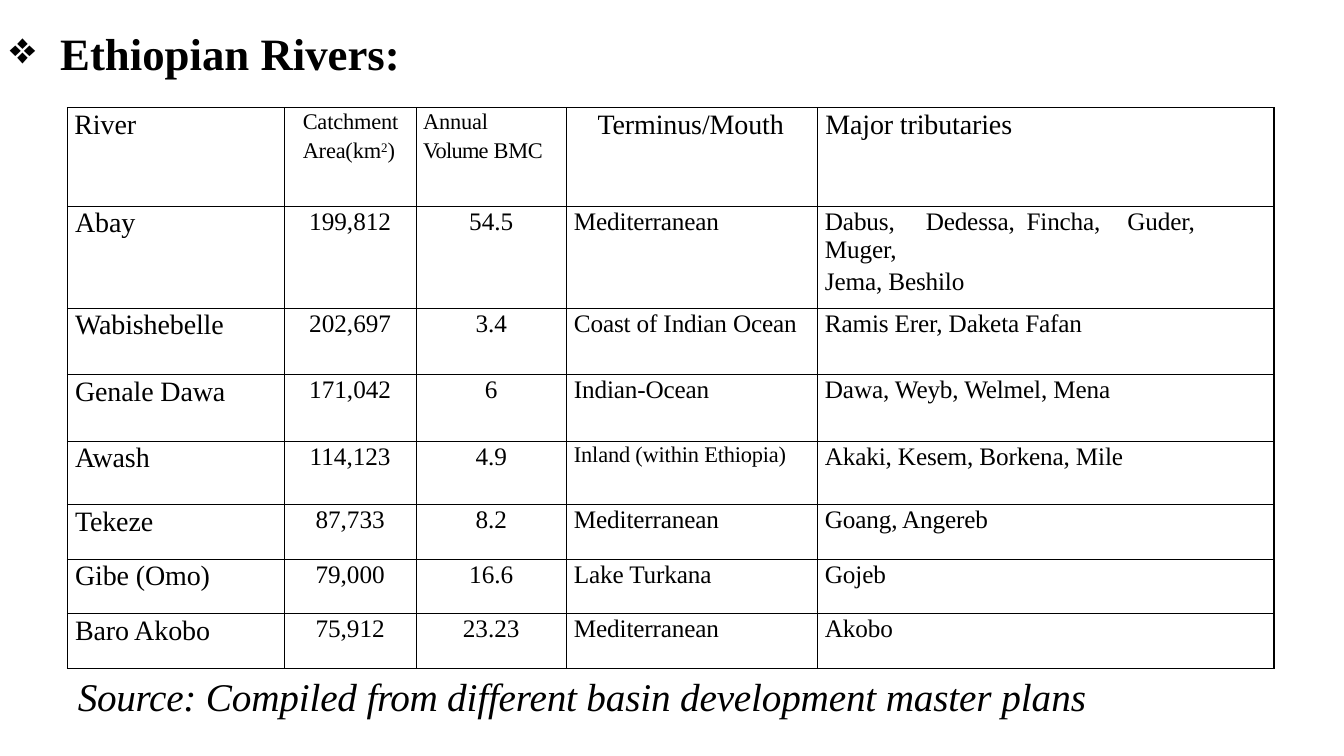
from lxml import etree
from pptx import Presentation
from pptx.dml import color
from pptx.enum import text
from pptx.oxml import ns
from pptx.util import Pt

FACE = "Times New Roman"
INK = "000000"
COLS = [154.8, 94.3, 107.3, 179.3, 326.2]
ROWS = [70.6, 72.7, 47.5, 47.5, 45.4, 38.9, 38.9, 38.9]
STOPS = [67, 142.6, 206.6, 266.4]
HEADS = [
    (20, 5, [[("River", -0.1)]]),
    (16, 13.3, [[("Catchment", -0.1)], [("Area(km", -0.1), ("2", -0.1, 26), (")", -0.1)]]),
    (16, 5, [[("Annual", -0.1)], [("Volume ", -0.5), ("BMC", -0.1)]]),
    (20, 22.3, [[("Terminus/Mouth", -0.1)]]),
    (20, 5.7, [[("Major tributaries", -0.1)]]),
]
RIVERS = [
    ("Abay", "199,812", "54.5", "Mediterranean",
     "Dabus,\tDedessa,\tFincha,\tGuder,\tMuger,\nJema, Beshilo"),
    ("Wabishebelle", "202,697", "3.4", "Coast of Indian Ocean", "Ramis Erer, Daketa Fafan"),
    ("Genale Dawa", "171,042", "6", "Indian-Ocean", "Dawa, Weyb, Welmel, Mena"),
    ("Awash", "114,123", "4.9", "Inland (within Ethiopia)", "Akaki, Kesem, Borkena, Mile"),
    ("Tekeze", "87,733", "8.2", "Mediterranean", "Goang, Angereb"),
    ("Gibe (Omo)", "79,000", "16.6", "Lake Turkana", "Gojeb"),
    ("Baro Akobo", "75,912", "23.23", "Mediterranean", "Akobo"),
]


def paint(code):
    return color.RGBColor.from_string(code)


def add(parent, tag, **attrs):
    node = etree.SubElement(parent, ns.qn(tag))
    for key, value in attrs.items():
        node.set(key, str(value))
    return node


def write(par, bits, size, left=0, hang=0, gap=0.7, mid=False, bold=False, slant=False):
    par.alignment = text.PP_ALIGN.CENTER if mid else text.PP_ALIGN.LEFT
    par.space_before = Pt(gap)
    props = par._p.get_or_add_pPr()
    props.set("marL", str(Pt(left)))
    props.set("indent", str(Pt(hang)))
    for words, track, *rise in bits:
        run = par.add_run()
        run.text = words
        font = run.font
        font.name, font.size = FACE, Pt(size)
        font.bold, font.italic = bold, slant
        font.color.rgb = paint(INK)
        marks = run._r.get_or_add_rPr()
        marks.set("spc", str(round(track * 100)))
        if rise:
            marks.set("baseline", str(rise[0] * 1000))
    return props


def trim(frame):
    frame.margin_left = frame.margin_right = frame.margin_bottom = 0
    frame.margin_top = Pt(0.9)
    frame.vertical_anchor = text.MSO_ANCHOR.TOP
    frame.word_wrap = True
    frame.auto_size = text.MSO_AUTO_SIZE.SHAPE_TO_FIT_TEXT


def head(slide, left, top, width, height):
    title = slide.shapes.title
    title.left, title.top, title.width, title.height = map(Pt, (left, top, width, height))
    trim(title.text_frame)
    props = write(title.text_frame.paragraphs[0], [("Ethiopian Rivers:", 0)],
                  32, 36.5, -36, 1, bold=True)
    add(props, "a:buChar", char="❖")
    add(add(props, "a:tabLst"), "a:tab", pos=Pt(36.5), algn="l")


def frame(cell):
    cell.margin_left = cell.margin_right = cell.margin_bottom = 0
    cell.margin_top = Pt(0.9)
    props = cell._tc.get_or_add_tcPr()
    for side in "LRTB":
        line = add(props, "a:ln" + side, w=Pt(1))
        add(add(line, "a:solidFill"), "a:srgbClr", val=INK)
    cell.fill.background()


def fill(cell, lines, size, left, gap, mid=False):
    frame(cell)
    box = cell.text_frame
    for i, bits in enumerate(lines):
        par = box.add_paragraph() if i else box.paragraphs[0]
        props = write(par, bits, size, left, gap=3 if i else gap, mid=mid)
        if "\t" in bits[0][0]:
            tabs = add(props, "a:tabLst")
            for stop in STOPS:
                add(tabs, "a:tab", pos=Pt(stop), algn="l")


def grid(slide, left, top):
    table = slide.shapes.add_table(len(ROWS), len(COLS), Pt(left), Pt(top),
                                   Pt(sum(COLS)), Pt(sum(ROWS))).table
    table.first_row = table.horz_banding = False
    for col, width in zip(table.columns, COLS):
        col.width = Pt(width)
    for row, height in zip(table.rows, ROWS):
        row.height = Pt(height)
    for c, (size, inset, lines) in enumerate(HEADS):
        fill(table.cell(0, c), lines, size, inset, 0.8 if size == 20 else 0.6)
    for r, river in enumerate(RIVERS, 1):
        for c, words in enumerate(river):
            mid = c in (1, 2)
            size = 20 if c == 0 else 16 if words.startswith("Inland") else 18
            lines = [[(line, 0 if mid else -0.1)] for line in words.split("\n")]
            fill(table.cell(r, c), lines, size, 0 if mid else 5.4, 0.7, mid)


def source(slide, left, top, width, height):
    box = slide.shapes.add_textbox(Pt(left), Pt(top), Pt(width), Pt(height)).text_frame
    trim(box)
    bits = [("Source: ", -0.2), ("Compiled ", -0.1), ("from ", -0.3),
            ("different basin development master ", -0.1), ("plans", 0)]
    write(box.paragraphs[0], bits, 28, 0.9, gap=0.9, slant=True)


def main():
    deck = Presentation()
    deck.slide_width, deck.slide_height = Pt(960), Pt(540)
    slide = deck.slides.add_slide(deck.slide_layouts[5])
    head(slide, 6.5, 17.3, 280.8, 40.3)
    grid(slide, 48.2, 77)
    source(slide, 54.7, 479.5, 730, 35.3)
    deck.save("out.pptx")


if __name__ == "__main__":
    main()
